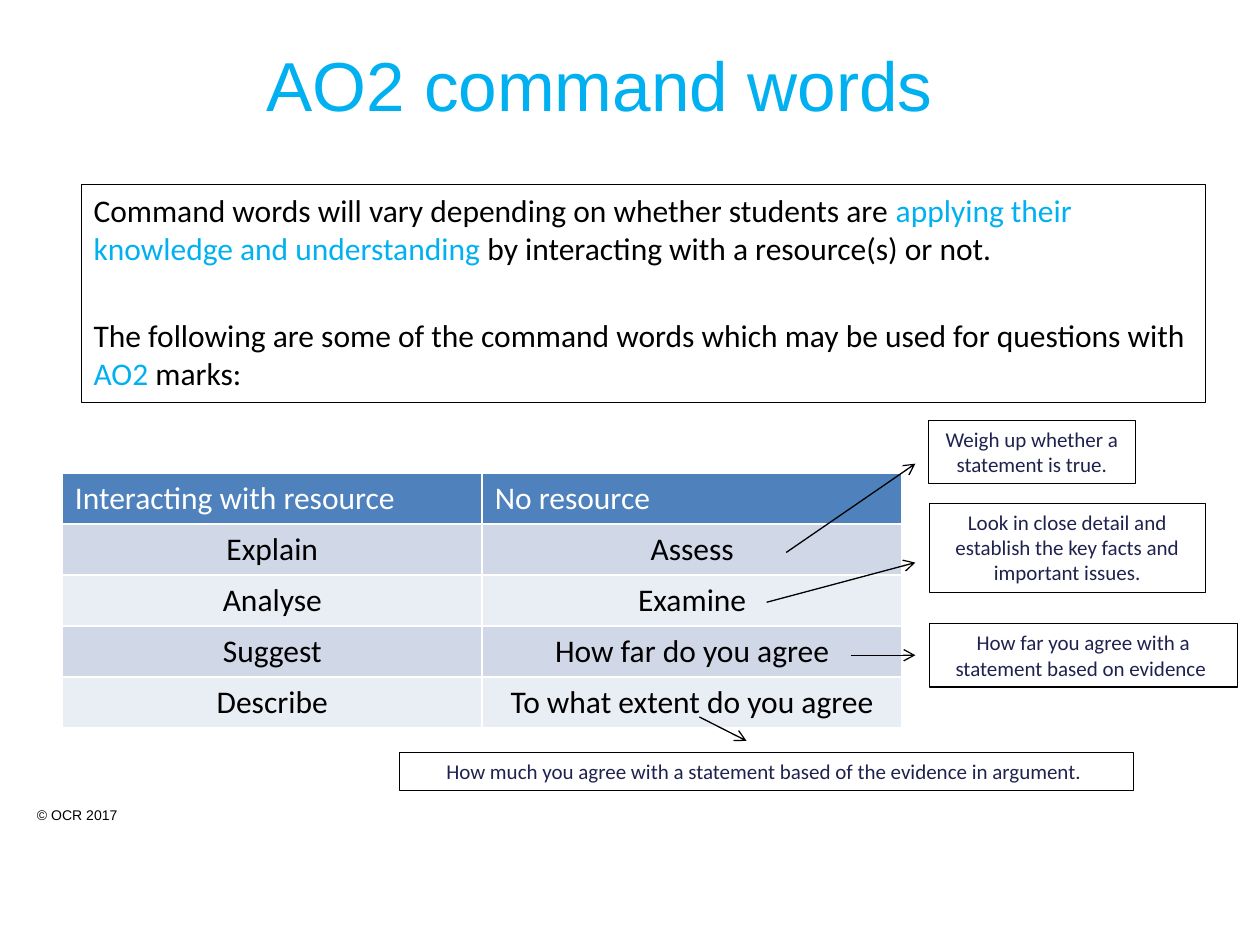
from lxml import etree
from pptx import Presentation
from pptx.dml.color import RGBColor
from pptx.enum.shapes import MSO_CONNECTOR, MSO_SHAPE
from pptx.enum.text import MSO_ANCHOR, PP_ALIGN
from pptx.oxml.ns import qn
from pptx.util import Inches, Pt

LEFT, MID = PP_ALIGN.LEFT, PP_ALIGN.CENTER
TOP, CENTRE = MSO_ANCHOR.TOP, MSO_ANCHOR.MIDDLE
RECT, LINE = MSO_SHAPE.RECTANGLE, MSO_CONNECTOR.STRAIGHT

COLS, ROWS = 100, 75
CELL = Inches(0.1)
HUES = {
    "black": "000000", "white": "FFFFFF", "sky": "00B0F0", "navy": "1F224E",
    "head": "4F81BD", "dark": "D0D8E8", "light": "E9EDF4",
}

INTRO = [
    [("Command words will vary depending on whether students are ", "black"),
     ("applying their knowledge and understanding", "sky"),
     (" by interacting with a resource(s) or not.", "black")],
    [("The following are some of the command words which may be used for "
      "questions with ", "black"),
     ("AO2 ", "sky"),
     ("marks:", "black")],
]
WORDS = [
    ("Interacting with resource", "No resource"),
    ("Explain", "Assess"),
    ("Analyse", "Examine"),
    ("Suggest", "How far do you agree"),
    ("Describe", "To what extent do you agree"),
]
# Note text, its box, its fill, then its arrow: lengths in grid cells
NOTES = [
    ("Weigh up whether a statement is true.",
     (73.7, 33.35, 16.4, 5.04), None, (62.4, 43.85, 72.65, 36.8)),
    ("Look in close detail and establish the key facts and important issues.",
     (73.75, 39.95, 21.9, 7.06), None, (60.85, 47.8, 72.65, 44.65)),
    ("How far you agree with a statement based on evidence ",
     (73.75, 49.5, 24.45, 5.04), None, (67.5, 52, 72.65, 52)),
    ("How much you agree with a statement based of the evidence in argument. ",
     (31.7, 59.7, 58.25, 3.03), "white", (55.5, 56.9, 59.25, 58.8)),
]


def grid(*spans):
    return [round(span * CELL) for span in spans]


def hue(name):
    return RGBColor.from_string(HUES[name])


def write(para, runs, size, font="Calibri", align=LEFT):
    """Add (text, colour) runs to a paragraph."""
    para.alignment = align
    for text, tint in runs:
        run = para.add_run()
        run.text = text
        run.font.size = Pt(size)
        run.font.name = font
        run.font.bold = False
        run.font.color.rgb = hue(tint)


def paint(shape, fill):
    if fill:
        shape.fill.solid()
        shape.fill.fore_color.rgb = hue(fill)
    else:
        shape.fill.background()


def add_title(slide, text):
    title = slide.shapes.title
    title.left, title.top, title.width, title.height = grid(0, 2.9, 95.15, 7.5)
    frame = title.text_frame
    frame.vertical_anchor = CENTRE
    write(frame.paragraphs[0], [(text, "sky")], 39.6, "Arial", MID)


def add_box(slide, place, paras, size, align=LEFT, gap=0, fill=None):
    """Draw an outlined box, with a gap in points between paragraphs."""
    box = slide.shapes.add_shape(RECT, *grid(*place))
    box.shadow.inherit = False
    paint(box, fill)
    box.line.color.rgb = hue("black")
    box.line.width = Pt(0.75)
    frame = box.text_frame
    frame.word_wrap = True
    frame.vertical_anchor = TOP
    for i, runs in enumerate(paras):
        para = frame.add_paragraph() if i else frame.paragraphs[0]
        if i:
            para.space_before = Pt(gap)
        write(para, runs, size, align=align)


def add_words(slide):
    place = grid(4.95, 37.55, 66.65, 20.25)
    table = slide.shapes.add_table(len(WORDS), 2, *place).table
    for r, words in enumerate(WORDS):
        fill = ("dark" if r % 2 else "light") if r else "head"
        tint, align = ("black", MID) if r else ("white", LEFT)
        for c, word in enumerate(words):
            cell = table.cell(r, c)
            paint(cell, fill)
            write(cell.text_frame.paragraphs[0], [(word, tint)], 18, align=align)


def add_arrow(slide, ends):
    arrow = slide.shapes.add_connector(LINE, *grid(*ends))
    arrow.line.color.rgb = hue("black")
    arrow.line.width = Pt(0.75)
    props = arrow._element.spPr
    etree.SubElement(props.find(qn("a:ln")), qn("a:tailEnd"), type="arrow")
    etree.SubElement(props, qn("a:effectLst"))


def add_foot(slide, text):
    box = slide.shapes.add_textbox(*grid(1.95, 63.5, 18.9, 2.4))
    box.text_frame.word_wrap = True
    write(box.text_frame.paragraphs[0], [(text, "black")], 8, "Arial")


def main():
    deck = Presentation()
    deck.slide_width, deck.slide_height = grid(COLS, ROWS)
    slide = deck.slides.add_slide(deck.slide_layouts[5])
    add_foot(slide, "© OCR 2017")
    add_title(slide, "AO2 command words")
    add_box(slide, (6.45, 14.65, 89.25, 17.3), INTRO, 18, gap=28.5)
    add_words(slide)
    for text, place, fill, _ in NOTES:
        add_box(slide, place, [[(text, "navy")]], 12, MID, fill=fill)
    for *_, ends in NOTES:
        add_arrow(slide, ends)
    deck.save("out.pptx")


if __name__ == "__main__":
    main()
